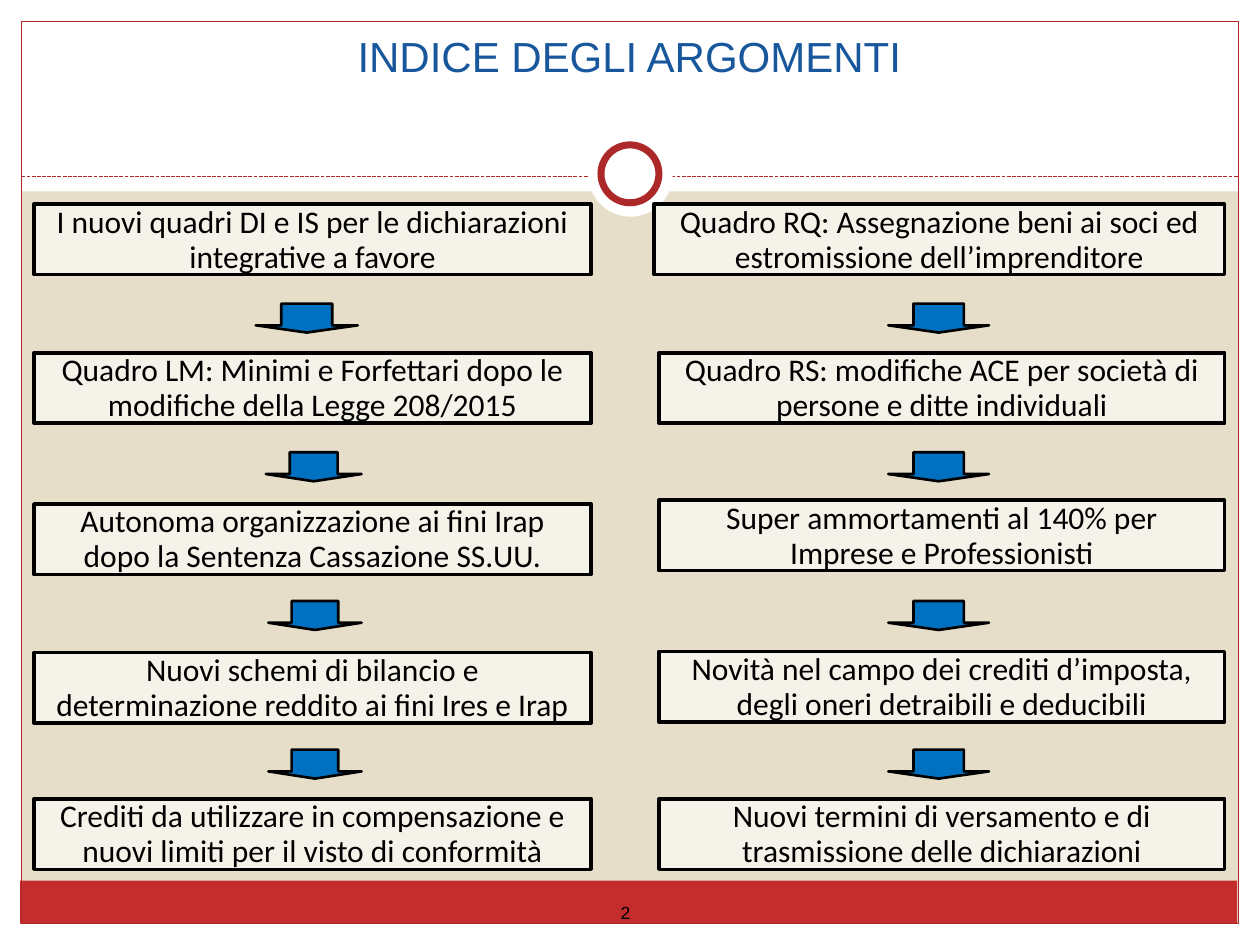
from lxml import etree
from pptx import Presentation
from pptx.dml.color import RGBColor
from pptx.enum import dml, shapes, text
from pptx.oxml.ns import qn
from pptx.util import Inches, Pt

HUES = {
    "sand": "E7DEC9", "white": "FFFFFF", "red": "C32D2E", "dark": "AC2829",
    "title": "18579B", "cream": "F5F2E9", "blue": "0070C0", "black": "000000",
}
KIND = shapes.MSO_SHAPE


def hue(name):
    return RGBColor.from_string(HUES[name])


def write(shape, words, font="Arial", size=18, color="black", space=None,
          inset=(0.1, 0.05)):
    """Put one centred paragraph in a shape."""
    frame = shape.text_frame
    frame.word_wrap = True
    frame.auto_size = text.MSO_AUTO_SIZE.NONE
    frame.vertical_anchor = text.MSO_ANCHOR.MIDDLE
    frame.margin_left = frame.margin_right = Inches(inset[0])
    frame.margin_top = frame.margin_bottom = Inches(inset[1])
    para = frame.paragraphs[0]
    para.alignment = text.PP_ALIGN.CENTER
    if space:
        para.line_spacing = Pt(space)
    run = para.add_run()
    run.text = words
    run.font.name = font
    run.font.size = Pt(size)
    run.font.color.rgb = hue(color)


def draw(kind, box, fill=None, line=None, width=0.75):
    """Add a flat preset shape; box is left, top, width, height in inches."""
    shape = slide.shapes.add_shape(kind, *map(Inches, box))
    shape.shadow.inherit = False
    if fill:
        shape.fill.solid()
        shape.fill.fore_color.rgb = hue(fill)
    else:
        shape.fill.background()
    if line:
        shape.line.color.rgb = hue(line)
        shape.line.width = Pt(width)
    else:
        shape.line.fill.background()
    return shape


deck = Presentation()
deck.slide_width, deck.slide_height = Inches(10), Inches(7.5)
slide = deck.slides.add_slide(deck.slide_layouts[5])
slide.background.fill.solid()
slide.background.fill.fore_color.rgb = hue("sand")

# White margins, header and red footer band
for box, fill in [
    ((0, 7.33, 10, 0.17), "white"),
    ((0, 0, 10, 1.52), "white"),
    ((0, 0, 0.17, 7.5), "white"),
    ((9.83, 0, 0.17, 7.5), "white"),
    ((0.16, 6.99, 9.66, 0.34), "red"),
]:
    draw(KIND.RECTANGLE, box, fill)

# Frame, dashed rule and ring
draw(KIND.RECTANGLE, (0.17, 0.17, 9.66, 7.16), line="dark")
rule = slide.shapes.add_connector(
    shapes.MSO_CONNECTOR.STRAIGHT,
    Inches(0.17), Inches(1.4), Inches(9.83), Inches(1.4))
rule.line.color.rgb = hue("dark")
rule.line.width = Pt(0.75)
rule.line.dash_style = dml.MSO_LINE.SQUARE_DOT
etree.SubElement(rule._element.spPr, qn("a:effectLst"))
draw(KIND.OVAL, (4.67, 1.05, 0.67, 0.67), "white")
draw(KIND.OVAL, (4.77, 1.15, 0.46, 0.46), "white", "dark", 4)

# Title, brought in front of the white header
title = slide.shapes.title
title.left, title.top = Inches(0.27), Inches(0.21)
title.width, title.height = Inches(9.45), Inches(0.47)
write(title, "INDICE DEGLI ARGOMENTI", size=24, color="title")
slide.shapes._spTree.append(title._element)

# Topics of each column: left, top, width, words
topics = [
    (0.27, 1.62, 4.42, "I nuovi quadri DI e IS per le dichiarazioni integrative a favore"),
    (0.27, 2.8, 4.42, "Quadro LM: Minimi e Forfettari dopo le modifiche della Legge 208/2015"),
    (0.27, 4, 4.42, "Autonoma organizzazione ai fini Irap dopo la Sentenza Cassazione SS.UU."),
    (0.27, 5.18, 4.42, "Nuovi schemi di bilancio e determinazione reddito ai fini Ires e Irap"),
    (0.27, 6.34, 4.42, "Crediti da utilizzare in compensazione e nuovi limiti per il visto di conformità"),
    (5.19, 1.62, 4.53, "Quadro RQ: Assegnazione beni ai soci ed estromissione dell’imprenditore"),
    (5.23, 2.8, 4.49, "Quadro RS: modifiche ACE per società di persone e ditte individuali"),
    (5.23, 3.97, 4.49, "Super ammortamenti al 140% per Imprese e Professionisti"),
    (5.23, 5.17, 4.49, "Novità nel campo dei crediti d’imposta, degli oneri detraibili e deducibili"),
    (5.23, 6.34, 4.49, "Nuovi termini di versamento e di trasmissione delle dichiarazioni"),
]
for left, top, width, words in topics:
    card = draw(KIND.RECTANGLE, (left, top, width, 0.56), "cream", "black", 2)
    write(card, words, font="Calibri", space=20)

# Arrows between the topics: left and width in the first column
steps = [(2.03, 0.81), (2.11, 0.76), (2.13, 0.74), (2.13, 0.74)]
for row, step in enumerate(steps):
    for left, width in (step, (7.05, 0.8)):
        arrow = draw(KIND.DOWN_ARROW, (left, 2.41 + 1.18 * row, width, 0.23),
                     "blue", "black", 1.5)
        arrow.adjustments[0] = 0.5
        arrow.adjustments[1] = 0.25

# Page number
page = slide.shapes.add_textbox(
    Inches(4.76), Inches(7.11), Inches(0.41), Inches(0.26))
write(page, "2", size=10, inset=(0, 0))

deck.save("out.pptx")
